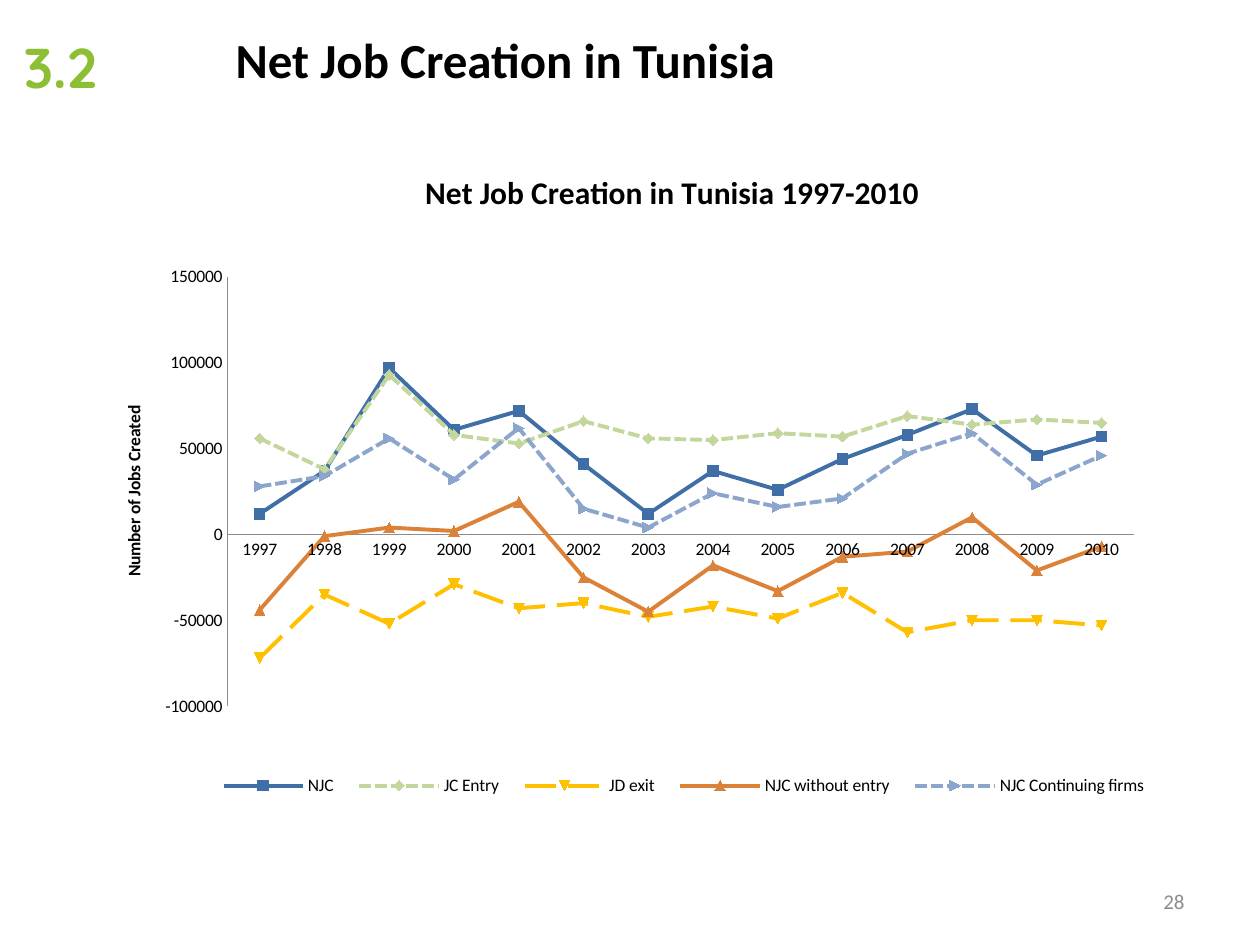
from lxml.etree import SubElement
from pptx import Presentation
from pptx.chart.data import CategoryChartData
from pptx.dml.color import RGBColor
from pptx.enum.chart import XL_CHART_TYPE, XL_LEGEND_POSITION, XL_TICK_MARK
from pptx.enum.dml import MSO_LINE
from pptx.enum.text import MSO_ANCHOR, PP_ALIGN
from pptx.oxml import parse_xml
from pptx.oxml.ns import nsdecls, qn
from pptx.util import Cm, Pt

THEME = {
    "font": "Calibri", "accent_font": "Quicksand",
    "text": "000000", "muted": "8C8C8C", "accent": "8CBF34",
    "title": 28, "section": 32, "chart_title": 18, "chart": 10, "number": 12,
    "line": 2.25, "axis_line": 0.75, "marker": 6,
}

TITLE = "Net Job Creation in Tunisia"
SECTION = "3.2"
SLIDE_NUMBER = "28"
CHART_TITLE = "Net Job Creation in Tunisia 1997-2010"
AXIS_TITLE = "Number of Jobs Created"
YEARS = [str(year) for year in range(1997, 2011)]
SERIES = [
    ("NJC", "406FA8", MSO_LINE.SOLID,
     [12000, 37000, 97000, 61000, 72000, 41000, 12000,
      37000, 26000, 44000, 58000, 73000, 46000, 57000]),
    ("JC Entry", "C3D69B", MSO_LINE.SQUARE_DOT,
     [56000, 38000, 93000, 58000, 53000, 66000, 56000,
      55000, 59000, 57000, 69000, 64000, 67000, 65000]),
    ("JD exit", "FFC000", MSO_LINE.LONG_DASH,
     [-72000, -35000, -52000, -29000, -43000, -40000, -48000,
      -42000, -49000, -34000, -57000, -50000, -50000, -53000]),
    ("NJC without entry", "DB8238", MSO_LINE.SOLID,
     [-44000, -1000, 4000, 2000, 19000, -25000, -45000,
      -18000, -33000, -13000, -10000, 10000, -21000, -7000]),
    ("NJC Continuing firms", "8CA5CD", MSO_LINE.SQUARE_DOT,
     [28000, 34000, 56000, 32000, 62000, 15000, 4000,
      24000, 16000, 21000, 47000, 59000, 29000, 46000]),
]


def set_font(font, size, color="text", name="font", bold=False):
    font.name = THEME[name]
    font.size = Pt(THEME[size])
    font.bold = bold
    font.color.rgb = RGBColor.from_string(THEME[color])


def write(sp, text, align, anchor, **style):
    tf = sp.text_frame
    tf.text = text
    tf.word_wrap = True
    tf.vertical_anchor = anchor
    p = tf.paragraphs[0]
    p.alignment = align
    set_font(p.runs[0].font, **style)


def set_layout(element, index, x, y, w=None, h=None, inner=False):
    for old in element.findall(qn("c:layout")):
        element.remove(old)
    layout = parse_xml(f"<c:layout {nsdecls('c')}><c:manualLayout/></c:layout>")
    values = [("xMode", "edge"), ("yMode", "edge"), ("x", x), ("y", y), ("w", w), ("h", h)]
    if inner:
        values.insert(0, ("layoutTarget", "inner"))
    for tag, value in values:
        if value is not None:
            SubElement(layout[0], qn(f"c:{tag}")).set("val", str(value))
    element.insert(index, layout)


def set_chart_text(title, text, size, x, y):
    tf = title.text_frame
    tf.text = text
    set_font(tf.paragraphs[0].runs[0].font, size, bold=True)
    set_layout(title._element, 1, x, y)


def style_axis(axis):
    axis.has_major_gridlines = False
    axis.major_tick_mark = axis.minor_tick_mark = XL_TICK_MARK.NONE
    axis.format.line.color.rgb = RGBColor.from_string(THEME["muted"])
    axis.format.line.width = Pt(THEME["axis_line"])
    set_font(axis.tick_labels.font, "chart")


def add_job_chart(s):
    data = CategoryChartData(number_format="General")
    data.categories = YEARS
    for name, _, _, values in SERIES:
        data.add_series(name, values)
    chart = s.shapes.add_chart(XL_CHART_TYPE.LINE_MARKERS, Cm(0.71), Cm(2.92),
                               Cm(24.21), Cm(13.67), data).chart
    set_font(chart.font, "chart")
    chart.has_title = True
    set_chart_text(chart.chart_title, CHART_TITLE, "chart_title", 0.32, 0.03)

    style_axis(chart.category_axis)
    axis = chart.value_axis
    style_axis(axis)
    axis.minimum_scale, axis.maximum_scale, axis.major_unit = -100000, 150000, 50000
    set_chart_text(axis.axis_title, AXIS_TITLE, "chart", 0.07, 0.38)

    chart.has_legend = True
    chart.legend.position = XL_LEGEND_POSITION.BOTTOM
    chart.legend.include_in_layout = False
    set_font(chart.legend.font, "chart")
    set_layout(chart.legend._element, 1, 0.14, 0.92, 0.8, 0.05)
    plot_area = chart._chartSpace.find(f".//{qn('c:plotArea')}")
    set_layout(plot_area, 0, 0.16, 0.195, 0.755, 0.633, inner=True)

    plot = chart.plots[0]
    plot.vary_by_categories = False
    for series, (_, color, dash, _) in zip(plot.series, SERIES):
        rgb = RGBColor.from_string(color)
        series.smooth = False
        line = series.format.line
        line.color.rgb = rgb
        line.width = Pt(THEME["line"])
        line.dash_style = dash
        series.marker.size = THEME["marker"]
        series.marker.format.fill.solid()
        series.marker.format.fill.fore_color.rgb = rgb
        series.marker.format.line.color.rgb = rgb


def main():
    prs = Presentation()
    prs.slide_width, prs.slide_height = Cm(25.4), Cm(19.05)
    s = prs.slides.add_slide(prs.slide_layouts[5])

    title = s.shapes.title
    title.left, title.top, title.width, title.height = Cm(1.09), Cm(0.08), Cm(18.19), Cm(2.21)
    write(title, TITLE, PP_ALIGN.CENTER, MSO_ANCHOR.MIDDLE, size="title", bold=True)

    add_job_chart(s)

    section = s.shapes.add_textbox(Cm(0.23), Cm(0.53), Cm(2.11), Cm(1.63))
    write(section, SECTION, PP_ALIGN.LEFT, MSO_ANCHOR.TOP,
          size="section", color="accent", name="accent_font", bold=True)
    number = s.shapes.add_textbox(Cm(18.21), Cm(17.65), Cm(5.92), Cm(1.02))
    write(number, SLIDE_NUMBER, PP_ALIGN.RIGHT, MSO_ANCHOR.MIDDLE,
          size="number", color="muted")

    prs.save("out.pptx")


if __name__ == "__main__":
    main()
